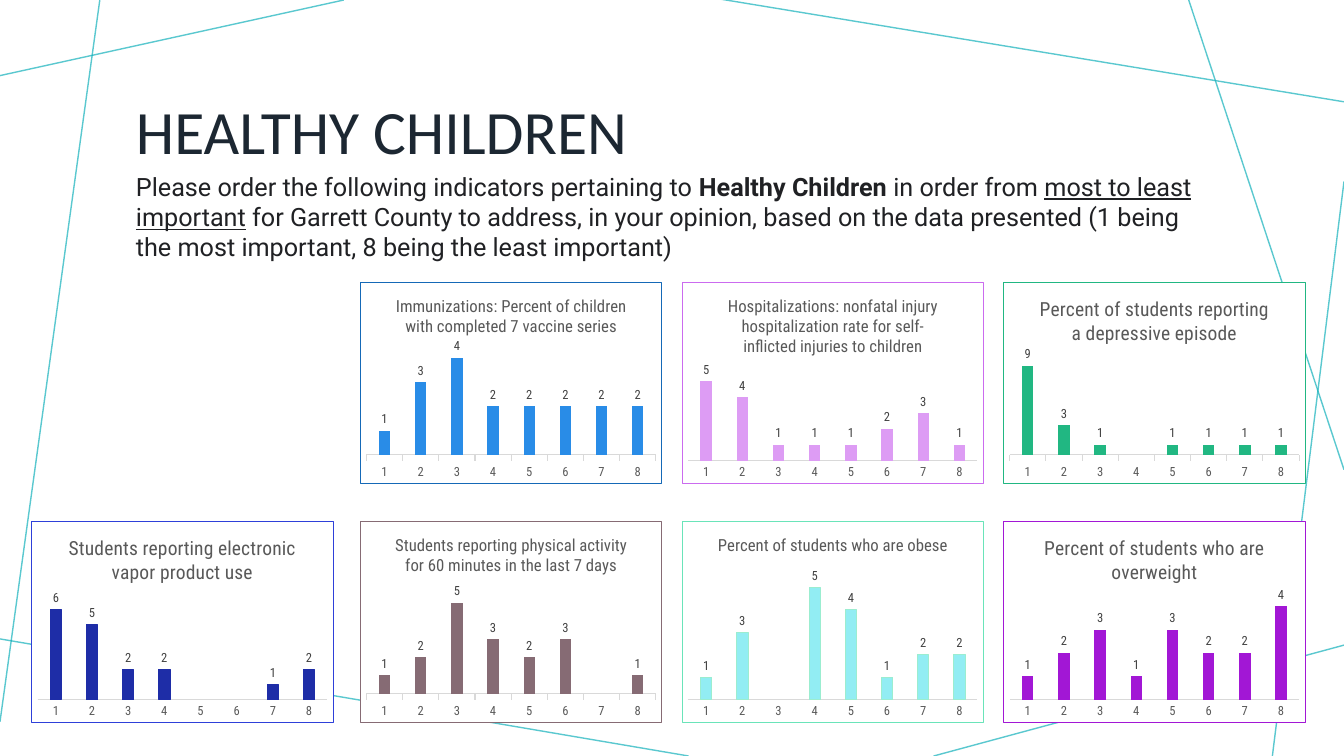
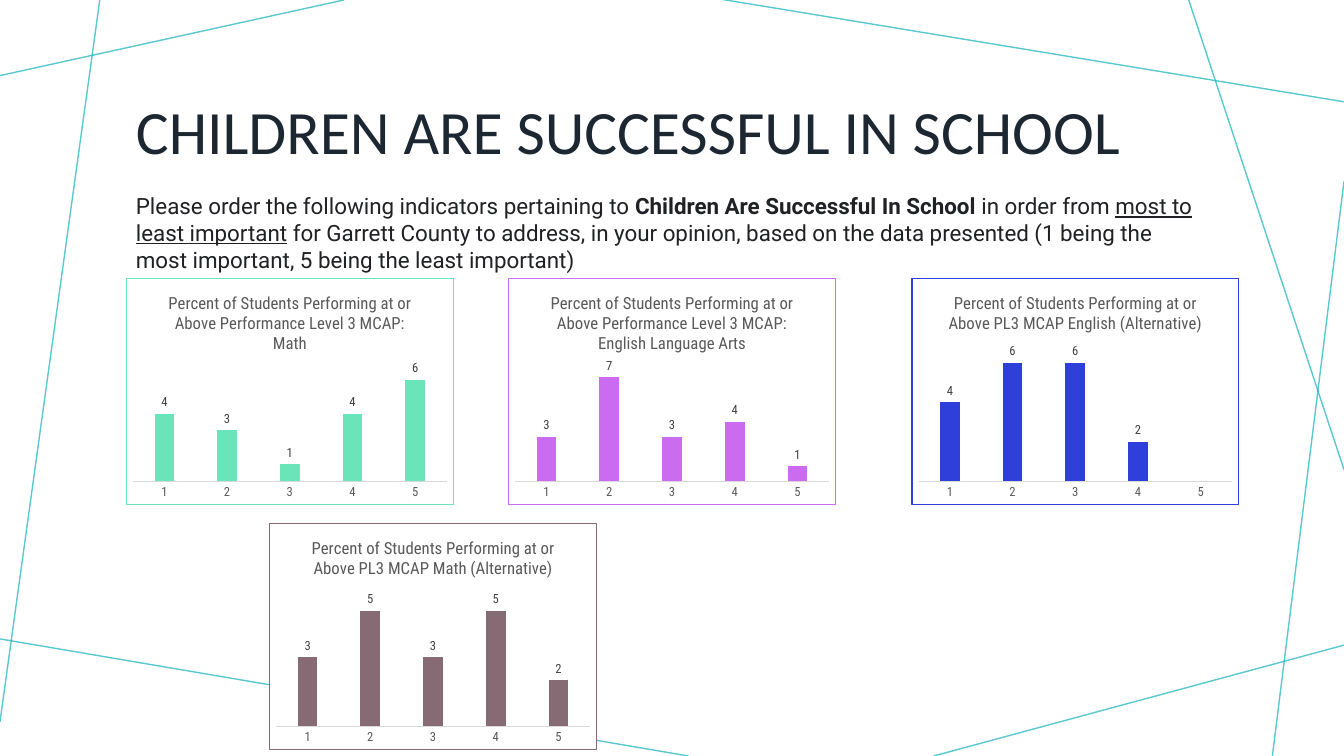
from dataclasses import dataclass

from lxml import etree
from pptx import Presentation
from pptx import util as u
from pptx.chart import chart as charts
from pptx.chart import data
from pptx.dml import color
from pptx.enum import chart as kinds
from pptx.enum import shapes, text
from pptx.oxml import ns, parse_xml
from pptx.slide import Slide

TEAL, NAVY, INK = "14B1BC", "1C2732", "202124"
GRAY, LABEL, RULE = "595959", "404040", "D9D9D9"
HEADING, BODY, CHART = "Calibri", "Roboto", "Roboto Condensed"
MARGIN, TEXT_WIDTH = 1.25, 10.83

BACKDROP = (
    (3.41, 0, 0, 0.75),
    (0.99, 0, 0, 7.16),
    (6.83, 7.5, -0.05, 6.33),
    (13.33, 6.4, 9.26, 7.5),
    (13.33, 1.8, 12.62, 7.5),
    (13.33, 4.66, 11.79, 0),
    (13.33, 1.01, 7.14, -0.01),
)


@dataclass(frozen=True)
class Poll:
    left: float
    top: float
    title: str
    votes: tuple[int | None, ...]
    fill: str
    border: str
    title_size: int = 12
    ticks: bool = False
    outline: str | None = None


@dataclass(frozen=True)
class Topic:
    title: str
    name: str
    prompt_top: float
    prompt_height: float
    prompt_size: int
    poll_width: float
    poll_height: float
    polls: tuple[Poll, ...]


UPPER, LOWER = 2.8, 5.17
COLUMNS = (0.31, 3.57, 6.76, 9.95)
SCHOOL_TOP = 2.76
PERFORMING = "Percent of Students Performing at or Above"

TOPICS = (
    Topic("HEALTHY CHILDREN", "Healthy Children", 1.65, 1.07, 18, 3, 2, (
        Poll(COLUMNS[1], UPPER,
             "Immunizations: Percent of children with completed 7 vaccine series",
             (1, 3, 4, 2, 2, 2, 2, 2), "298CE7", "1569B7", ticks=True),
        Poll(COLUMNS[2], UPPER,
             "Hospitalizations: nonfatal injury hospitalization rate for "
             "self-inflicted injuries to children",
             (5, 4, 1, 1, 1, 2, 3, 1), "DD9CF4", "CB6BEF"),
        Poll(COLUMNS[3], UPPER, "Percent of students reporting a depressive episode",
             (9, 3, 1, None, 1, 1, 1, 1), "21B782", "21B782", 14, ticks=True),
        Poll(COLUMNS[0], LOWER, "Students reporting electronic vapor product use",
             (6, 5, 2, 2, None, None, 1, 2), "1E2DA7", "2E40D9", 14,
             outline="1E2DA7"),
        Poll(COLUMNS[1], LOWER,
             "Students reporting physical activity for 60 minutes in the last 7 days",
             (1, 2, 5, 3, 2, 3, None, 1), "866B74", "866B74", ticks=True),
        Poll(COLUMNS[2], LOWER, "Percent of students who are obese",
             (1, 3, None, 5, 4, 1, 2, 2), "92EDF3", "6AE4B9", outline="9BEDD0"),
        Poll(COLUMNS[3], LOWER, "Percent of students who are overweight",
             (1, 2, 3, 1, 3, 2, 2, 4), "A217D5", "A217D5", 14),
    )),
    Topic("CHILDREN ARE SUCCESSFUL IN SCHOOL", "Children Are Successful In School",
          1.86, 0.9, 16, 3.25, 2.25, (
        Poll(MARGIN, SCHOOL_TOP, f"{PERFORMING} Performance Level 3 MCAP: Math",
             (4, 3, 1, 4, 6), "6AE4B9", "6AE4B9"),
        Poll(5.04, SCHOOL_TOP,
             f"{PERFORMING} Performance Level 3 MCAP: English Language Arts",
             (3, 7, 3, 4, 1), "CB6BEF", "CB6BEF"),
        Poll(9.04, SCHOOL_TOP, f"{PERFORMING} PL3 MCAP English (Alternative)",
             (4, 6, 6, 2, None), "2E40D9", "2E40D9"),
        Poll(2.67, 5.19, f"{PERFORMING} PL3 MCAP Math (Alternative)",
             (3, 5, 3, 5, 2), "866B74", "866B74"),
    )),
)


def rgb(value: str) -> color.RGBColor:
    return color.RGBColor.from_string(value)


def style_font(font: text.Any if hasattr(text, "Any") else object,
               name: str, size: float, tint: str, bold: bool = False) -> None:
    font.name = name
    font.size = u.Pt(size)
    font.color.rgb = rgb(tint)
    font.bold = bold


def add_backdrop(page: Slide) -> None:
    for ends in BACKDROP:
        line = page.shapes.add_connector(
            shapes.MSO_CONNECTOR.STRAIGHT, *(u.Inches(end) for end in ends))
        line.line.width = u.Pt(1)
        line.line.color.rgb = rgb(TEAL)
        properties = line.element.spPr
        tint = properties.find(f".//{ns.qn('a:srgbClr')}")
        etree.SubElement(tint, ns.qn("a:alpha")).set("val", "70000")
        etree.SubElement(properties, ns.qn("a:effectLst"))


def add_box(page: Slide, top: float, height: float):
    box = page.shapes.add_textbox(
        u.Inches(MARGIN), u.Inches(top), u.Inches(TEXT_WIDTH), u.Inches(height))
    box.text_frame.word_wrap = True
    return box


def add_title(page: Slide, title: str) -> None:
    frame = add_box(page, 0.58, 1.51).text_frame
    frame.vertical_anchor = text.MSO_ANCHOR.MIDDLE
    frame.text = title
    para = frame.paragraphs[0]
    para.line_spacing = 0.9
    style_font(para.runs[0].font, HEADING, 44, NAVY)


def add_prompt(page: Slide, topic: Topic) -> None:
    box = add_box(page, topic.prompt_top, topic.prompt_height)
    para = box.text_frame.paragraphs[0]
    para.space_before = u.Pt(10)
    count = len(topic.polls[0].votes)
    pieces = (
        ("Please order the following indicators pertaining to ", False, False),
        (topic.name, True, False),
        (" in order from ", False, False),
        ("most to least important", False, True),
        (" for Garrett County to address, in your opinion, based on the data "
         f"presented (1 being the most important, {count} being the least important)",
         False, False),
    )
    for words, bold, underline in pieces:
        span = para.add_run()
        span.text = words
        style_font(span.font, BODY, topic.prompt_size, INK, bold)
        span.font.underline = underline


def frame_chart(chart: charts.Chart, border: str) -> None:
    area = parse_xml(
        f'<c:spPr {ns.nsdecls("c", "a")}>'
        '<a:solidFill><a:srgbClr val="FFFFFF"/></a:solidFill>'
        f'<a:ln w="{u.Pt(0.75)}"><a:solidFill><a:srgbClr val="{border}"/>'
        '</a:solidFill></a:ln></c:spPr>')
    chart.element.find(ns.qn("c:chart")).addnext(area)


def style_axes(chart: charts.Chart, ticks: bool) -> None:
    marks = kinds.XL_TICK_MARK
    axis = chart.category_axis
    axis.major_tick_mark = marks.OUTSIDE if ticks else marks.NONE
    axis.minor_tick_mark = marks.NONE
    axis.has_major_gridlines = False
    axis.format.line.color.rgb = rgb(RULE)
    axis.format.line.width = u.Pt(0.75)
    style_font(axis.tick_labels.font, CHART, 9, GRAY)
    chart.value_axis.has_major_gridlines = False
    chart.value_axis.minimum_scale = 0
    chart.value_axis.visible = False


def style_bars(chart: charts.Chart, poll: Poll) -> None:
    plot = chart.plots[0]
    plot.gap_width = 219
    plot.overlap = -27
    plot.vary_by_categories = False
    bars = plot.series[0]
    bars.format.fill.solid()
    bars.format.fill.fore_color.rgb = rgb(poll.fill)
    if poll.outline:
        bars.format.line.color.rgb = rgb(poll.outline)
        bars.format.line.width = u.Pt(0.75)
    labels = bars.data_labels
    labels.show_value = True
    labels.position = kinds.XL_LABEL_POSITION.OUTSIDE_END
    style_font(labels.font, CHART, 9, LABEL)


def add_poll(page: Slide, poll: Poll, width: float, height: float) -> None:
    table = data.CategoryChartData()
    table.categories = [str(rank + 1) for rank in range(len(poll.votes))]
    table.add_series("Series 1", poll.votes)
    chart = page.shapes.add_chart(
        kinds.XL_CHART_TYPE.COLUMN_CLUSTERED, u.Inches(poll.left),
        u.Inches(poll.top), u.Inches(width), u.Inches(height), table).chart
    style_font(chart.font, CHART, 10, "000000")
    chart.has_legend = False
    chart.has_title = True
    frame = chart.chart_title.text_frame
    frame.text = poll.title
    style_font(frame.paragraphs[0].runs[0].font, CHART, poll.title_size, GRAY)
    style_axes(chart, poll.ticks)
    style_bars(chart, poll)
    frame_chart(chart, poll.border)


def main() -> None:
    deck = Presentation()
    deck.slide_width = u.Inches(13.33)
    deck.slide_height = u.Inches(7.5)
    for topic in TOPICS:
        page = deck.slides.add_slide(deck.slide_layouts[6])
        add_backdrop(page)
        add_title(page, topic.title)
        add_prompt(page, topic)
        for poll in topic.polls:
            add_poll(page, poll, topic.poll_width, topic.poll_height)
    deck.save("out.pptx")


if __name__ == "__main__":
    main()
